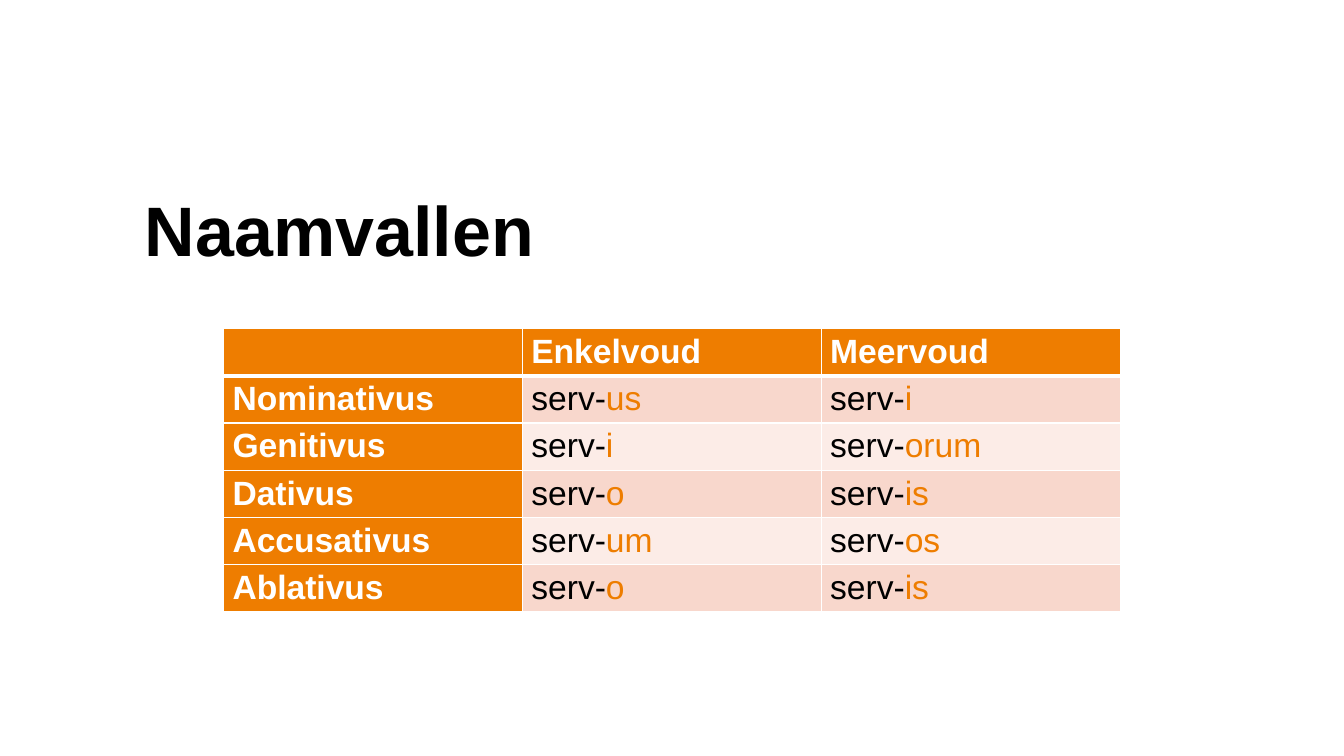
from lxml.etree import SubElement
from pptx import Presentation
from pptx.dml.color import RGBColor
from pptx.enum.text import MSO_ANCHOR, PP_ALIGN
from pptx.oxml.ns import qn
from pptx.util import Cm, Pt

ORANGE, WHITE, BLACK = "EE7D00", "FFFFFF", "000000"
BANDS = ("F8D7CC", "FCECE7")
STEM = "serv-"
NUMBERS = ("", "Enkelvoud", "Meervoud")
ENDINGS = {
    "Nominativus": ("us", "i"),
    "Genitivus": ("i", "orum"),
    "Dativus": ("o", "is"),
    "Accusativus": ("um", "os"),
    "Ablativus": ("o", "is"),
}


def rgb(value):
    return RGBColor.from_string(value)


class SlideBuilder:
    font_name = "Arial"
    table_size = 24

    def __init__(self, slide):
        self.slide = slide

    def style(self, font, size, color, bold=False):
        font.name, font.size, font.bold = self.font_name, Pt(size), bold
        font.color.rgb = rgb(color)

    def title(self, wording, left, top, width, height):
        heading = self.slide.shapes.title
        heading.left, heading.top = Cm(left), Cm(top)
        heading.width, heading.height = Cm(width), Cm(height)
        frame = heading.text_frame
        frame.text = wording
        frame.word_wrap = True
        frame.vertical_anchor = MSO_ANCHOR.TOP
        line = frame.paragraphs[0]
        line.alignment = PP_ALIGN.LEFT
        line.line_spacing = 0.9
        line.space_before = Pt(0)
        self.style(line.runs[0].font, 50, BLACK, bold=True)

    def table(self, rows, left, top, column_width, row_height):
        column_count = len(rows[0])
        grid = self.slide.shapes.add_table(
            len(rows), column_count, Cm(left), Cm(top),
            Cm(column_width * column_count), Cm(row_height * len(rows))).table
        for column in grid.columns:
            column.width = Cm(column_width)
        for row_index, row in enumerate(rows):
            grid.rows[row_index].height = Cm(row_height)
            for column_index, parts in enumerate(row):
                self.cell(grid.cell(row_index, column_index), parts,
                          row_index, column_index)

    def cell(self, cell, parts, row, column):
        is_heading = row == 0 or column == 0
        cell.margin_left = cell.margin_right = Cm(0.22)
        cell.margin_top = cell.margin_bottom = Cm(0.11)
        self.borders(cell, top=3 if row == 1 else 1, bottom=3 if row == 0 else 1)
        cell.fill.solid()
        cell.fill.fore_color.rgb = rgb(ORANGE if is_heading else BANDS[(row - 1) % 2])
        line = cell.text_frame.paragraphs[0]
        colors = (WHITE,) if is_heading else (BLACK, ORANGE)
        for wording, color in zip(parts, colors):
            run = line.add_run()
            run.text = wording
            self.style(run.font, self.table_size, color, bold=is_heading)

    def borders(self, cell, top, bottom):
        properties = cell._tc.get_or_add_tcPr()
        for side, points in (("L", 1), ("R", 1), ("T", top), ("B", bottom)):
            edge = SubElement(properties, qn(f"a:ln{side}"), w=str(Pt(points)))
            SubElement(SubElement(edge, qn("a:solidFill")), qn("a:srgbClr"), val=WHITE)


def main():
    deck = Presentation()
    deck.slide_width, deck.slide_height = Cm(33.87), Cm(19.05)
    builder = SlideBuilder(deck.slides.add_slide(deck.slide_layouts[5]))

    # Heading
    builder.title("Naamvallen", left=3.4, top=4.8, width=27.1, height=2.5)

    # Declension: each cell is a tuple of text parts
    rows = [[(number,) if number else () for number in NUMBERS]]
    for case, endings in ENDINGS.items():
        rows.append([(case,)] + [(STEM, ending) for ending in endings])
    builder.table(rows, left=5.64, top=8.28, column_width=7.53, row_height=1.19)

    deck.save("out.pptx")


if __name__ == "__main__":
    main()
